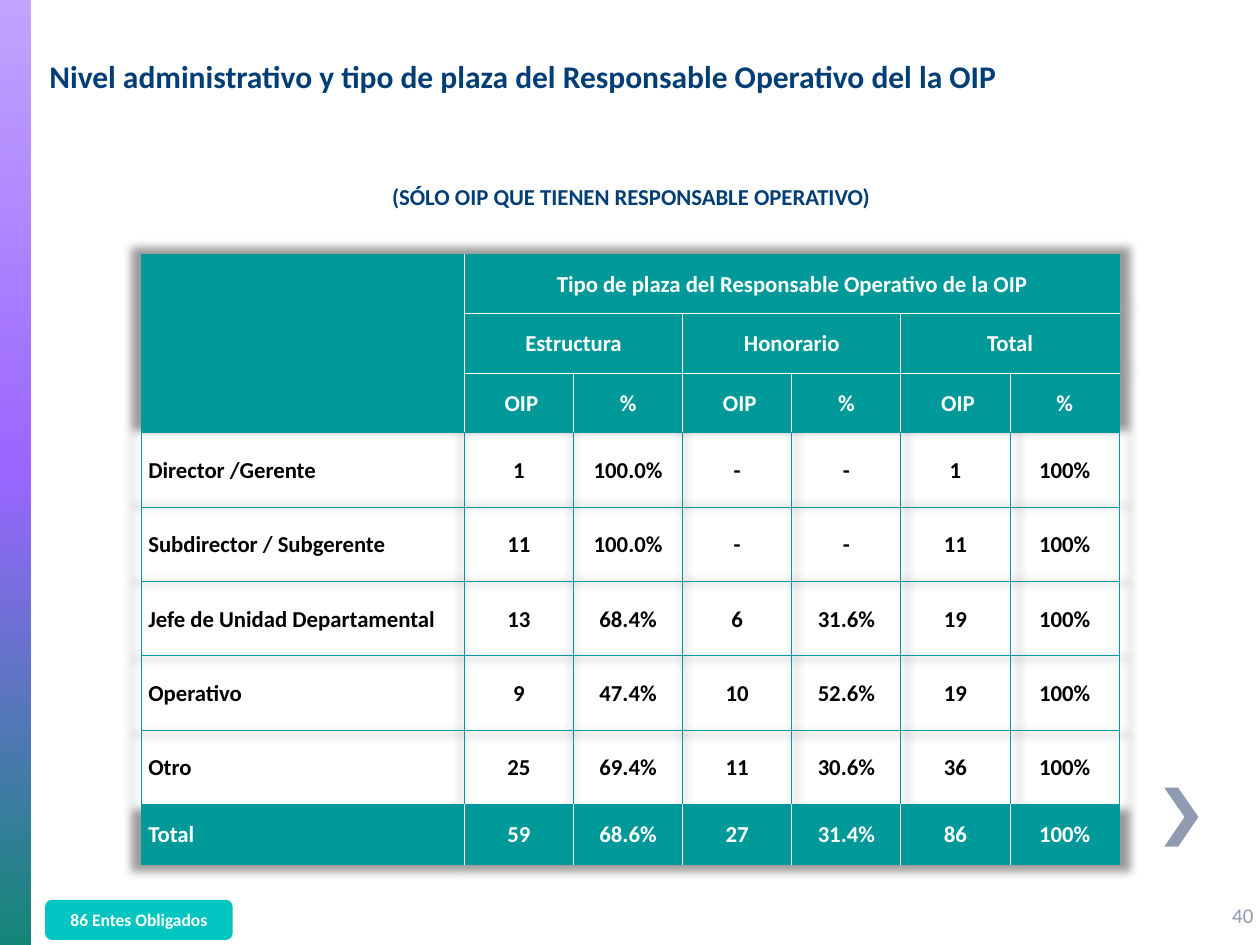
"""Build the slide on administrative level and post type of the OIP operative heads."""
import copy
import dataclasses

import lxml.etree
import pptx
import pptx.dml.color
import pptx.enum.shapes
import pptx.enum.text
import pptx.oxml.ns
import pptx.util

Cm = pptx.util.Cm
Pt = pptx.util.Pt
qn = pptx.oxml.ns.qn
rgb = pptx.dml.color.RGBColor.from_string
Align = pptx.enum.text.PP_ALIGN
Anchor = pptx.enum.text.MSO_ANCHOR
Shape = pptx.enum.shapes.MSO_SHAPE


@dataclasses.dataclass(frozen=True)
class Theme:
    """Colours, font and type sizes of the slide."""
    font: str = "Calibri"
    navy: str = "003E75"
    teal: str = "009999"
    aqua: str = "00C5C0"
    grey: str = "8E9BB0"
    white: str = "FFFFFF"
    black: str = "000000"
    stripe: tuple = ((0, "C2A3FF"), (0.5, "9966FF"), (1, "138677"))
    title_size: int = 18
    table_size: int = 13
    number_size: int = 12
    badge_size: int = 10


THEME = Theme()
HEADER_ROWS = 3
ROWS = [
    ["", "Tipo de plaza del Responsable Operativo de la OIP"] + [""] * 5,
    ["", "Estructura", "", "Honorario", "", "Total", ""],
    [""] + ["OIP", "%"] * 3,
    ["Director /Gerente", "1", "100.0%", "-", "-", "1", "100%"],
    ["Subdirector / Subgerente", "11", "100.0%", "-", "-", "11", "100%"],
    ["Jefe de Unidad Departamental", "13", "68.4%", "6", "31.6%", "19", "100%"],
    ["Operativo", "9", "47.4%", "10", "52.6%", "19", "100%"],
    ["Otro", "25", "69.4%", "11", "30.6%", "36", "100%"],
    ["Total", "59", "68.6%", "27", "31.4%", "86", "100%"],
]
MERGES = [((0, 0), (2, 0)), ((0, 1), (0, 6))] + [((1, c), (1, c + 1)) for c in (1, 3, 5)]
COLUMN_WIDTHS = [6.5] + [2.2] * 6
ROW_HEIGHTS = [1.2] * HEADER_ROWS + [1.5] * 5 + [1.2]


def write_text(frame, text, size, color, bold=True, align=Align.CENTER,
               anchor=Anchor.MIDDLE, wrap=True):
    """Fill a text frame with one formatted paragraph."""
    frame.text = text
    frame.word_wrap = wrap
    frame.vertical_anchor = anchor
    paragraph = frame.paragraphs[0]
    paragraph.alignment = align
    paragraph.font.name = THEME.font
    paragraph.font.size = Pt(size)
    paragraph.font.bold = bold
    paragraph.font.color.rgb = rgb(color)


def add_text(slide, text, left, top, width, height, **style):
    """Add a text box holding one formatted paragraph."""
    box = slide.shapes.add_textbox(Cm(left), Cm(top), Cm(width), Cm(height))
    write_text(box.text_frame, text, **style)


def paint(shape, color):
    """Give a shape a flat fill without outline or shadow."""
    shape.shadow.inherit = False
    shape.line.fill.background()
    shape.fill.solid()
    shape.fill.fore_color.rgb = rgb(color)


def add_stripe(slide):
    """Add the vertical gradient stripe on the left edge."""
    stripe = slide.shapes.add_shape(Shape.RECTANGLE, 0, 0, Cm(0.63), Cm(19.05))
    paint(stripe, THEME.white)
    stripe.fill.gradient()
    stripe.fill.gradient_angle = 270
    stops = stripe._element.spPr.find(".//" + qn("a:gsLst"))
    stops.append(copy.deepcopy(stops[0]))
    for stop, (position, color) in zip(stripe.fill.gradient_stops, THEME.stripe):
        stop.position = position
        stop.color.rgb = rgb(color)


def add_chevron(slide):
    """Add the arrow outline that points to the next slide."""
    points = [(23.75, 15.88), (23.47, 15.88), (23.88, 16.47),
              (23.47, 17.07), (23.75, 17.07), (24.16, 16.47)]
    corners = [(Cm(x), Cm(y)) for x, y in points]
    outline = slide.shapes.build_freeform(*corners[0])
    outline.add_line_segments(corners[1:], close=True)
    paint(outline.convert_to_shape(), THEME.grey)


def add_badge(slide, text):
    """Add the rounded label at the foot of the slide."""
    badge = slide.shapes.add_shape(Shape.ROUNDED_RECTANGLE, Cm(0.91), Cm(18.14), Cm(3.78), Cm(0.81))
    paint(badge, THEME.aqua)
    write_text(badge.text_frame, text, size=THEME.badge_size, color=THEME.white)


def zone(row, column):
    """Name the part of the table that a grid position falls in."""
    if not (0 <= row < len(ROWS) and 0 <= column < len(COLUMN_WIDTHS)):
        return "outside"
    if row < HEADER_ROWS:
        return "header"
    return "total" if row == len(ROWS) - 1 else "body"


def set_borders(cell, row, column):
    """Draw white lines inside filled zones and teal lines elsewhere."""
    own = zone(row, column)
    neighbours = {"L": (row, column - 1), "R": (row, column + cell.span_width),
                  "T": (row - 1, column), "B": (row + cell.span_height, column)}
    properties = cell._tc.get_or_add_tcPr()
    for index, (side, place) in enumerate(neighbours.items()):
        inner = own != "body" and zone(*place) == own
        line = lxml.etree.Element(qn("a:ln" + side), w=str(Pt(0.5)))
        fill = lxml.etree.SubElement(line, qn("a:solidFill"))
        lxml.etree.SubElement(fill, qn("a:srgbClr"), val=THEME.white if inner else THEME.teal)
        properties.insert(index, line)


def format_cell(cell, row, column):
    """Write and style one cell of the table."""
    filled = zone(row, column) != "body"
    if filled:
        cell.fill.solid()
        cell.fill.fore_color.rgb = rgb(THEME.teal)
    else:
        cell.fill.background()
    text = ROWS[row][column]
    indented = column == 0 or text == "OIP"
    cell.margin_left = Cm(0.13 if indented else 0.03)
    cell.margin_right = cell.margin_top = Cm(0.03)
    cell.margin_bottom = 0
    cell.vertical_anchor = Anchor.MIDDLE
    write_text(cell.text_frame, text, size=THEME.table_size,
               color=THEME.white if filled else THEME.black,
               align=Align.LEFT if column == 0 else Align.CENTER, anchor=None, wrap=None)
    set_borders(cell, row, column)


def add_table_shadow(table):
    """Drop the banded style and put a soft shadow around the table."""
    table.first_row = table.horz_banding = False
    properties = table._tbl.tblPr
    properties.find(qn("a:tableStyleId")).text = "{2D5ABB26-0587-4C30-8999-92F81FD0307C}"
    effects = lxml.etree.Element(qn("a:effectLst"))
    shadow = lxml.etree.SubElement(effects, qn("a:outerShdw"), blurRad=str(Pt(5)),
                                   sx="102000", sy="102000", algn="ctr", rotWithShape="0")
    color = lxml.etree.SubElement(shadow, qn("a:srgbClr"), val=THEME.black)
    lxml.etree.SubElement(color, qn("a:alpha"), val="40000")
    properties.insert(0, effects)


def add_posts_table(slide):
    """Add the table of posts by administrative level."""
    table = slide.shapes.add_table(len(ROWS), len(COLUMN_WIDTHS), Cm(2.86), Cm(5.12),
                                   Cm(sum(COLUMN_WIDTHS)), Cm(sum(ROW_HEIGHTS))).table
    add_table_shadow(table)
    for column, width in zip(table.columns, COLUMN_WIDTHS):
        column.width = Cm(width)
    for row, height in zip(table.rows, ROW_HEIGHTS):
        row.height = Cm(height)
    for first, last in MERGES:
        table.cell(*first).merge(table.cell(*last))
    for row in range(len(ROWS)):
        for column in range(len(COLUMN_WIDTHS)):
            if not table.cell(row, column).is_spanned:
                format_cell(table.cell(row, column), row, column)


def set_title(slide, text):
    """Place and write the slide title."""
    title = slide.shapes.title
    title.left, title.top, title.width, title.height = Cm(0.74), Cm(0.33), Cm(23.6), Cm(2.39)
    write_text(title.text_frame, text, size=THEME.title_size, color=THEME.navy, align=Align.LEFT)
    title.text_frame.auto_size = pptx.enum.text.MSO_AUTO_SIZE.NONE


def main():
    """Build and save the presentation."""
    deck = pptx.Presentation()
    deck.slide_width, deck.slide_height = Cm(25.4), Cm(19.05)
    slide = deck.slides.add_slide(deck.slide_layouts[5])
    add_stripe(slide)
    add_chevron(slide)
    add_text(slide, "40", 24.59, 17.93, 1.07, 1.02, size=THEME.number_size,
             color=THEME.grey, bold=False, align=Align.LEFT, wrap=False)
    add_posts_table(slide)
    set_title(slide, "Nivel administrativo y tipo de plaza del Responsable Operativo del la OIP")
    add_badge(slide, "86 Entes Obligados")
    add_text(slide, "(SÓLO OIP QUE TIENEN RESPONSABLE OPERATIVO)", 4.7, 3.56, 16.03, 0.81,
             size=THEME.table_size, color=THEME.navy, anchor=Anchor.TOP)
    deck.save("out.pptx")


if __name__ == "__main__":
    main()
